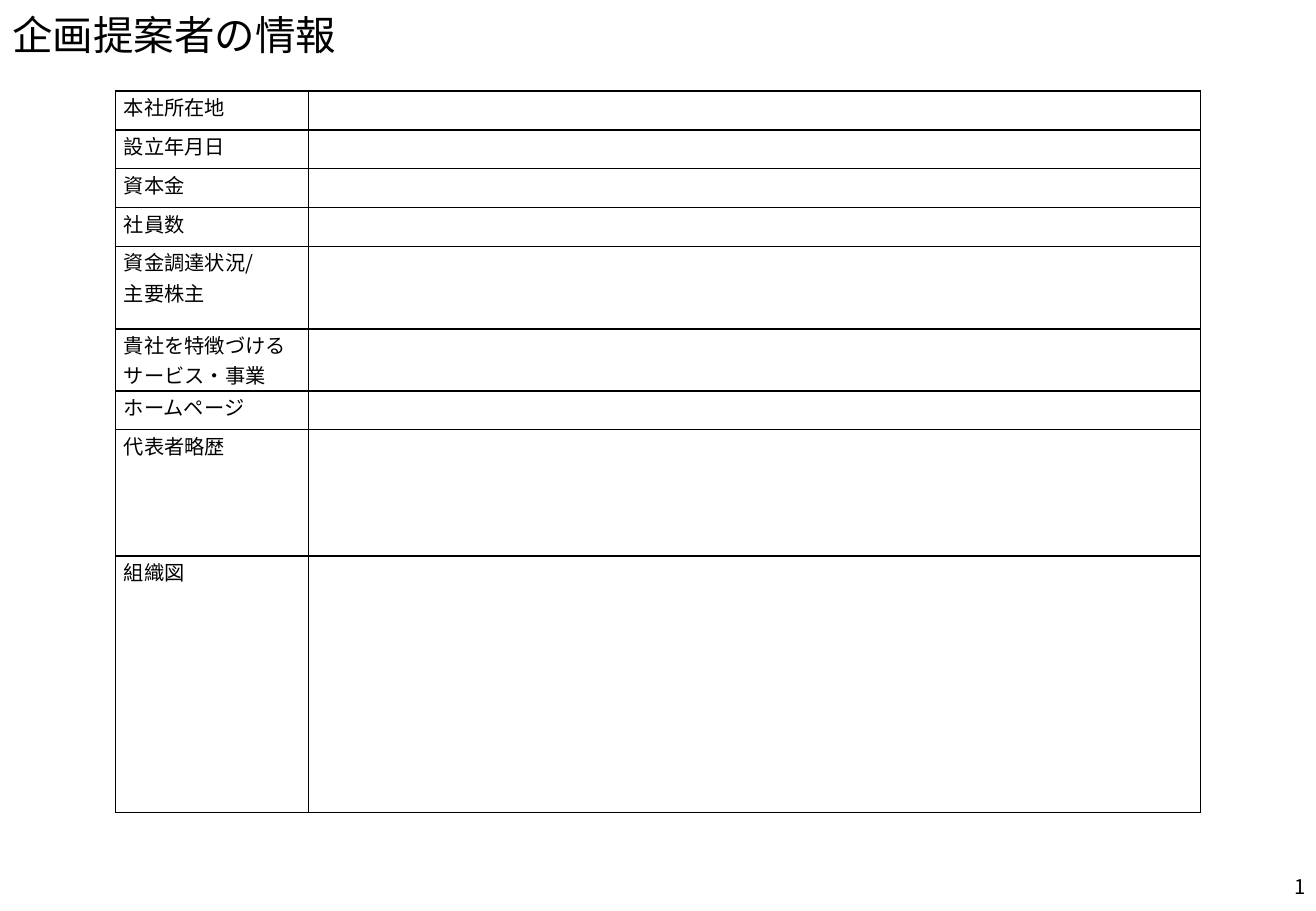
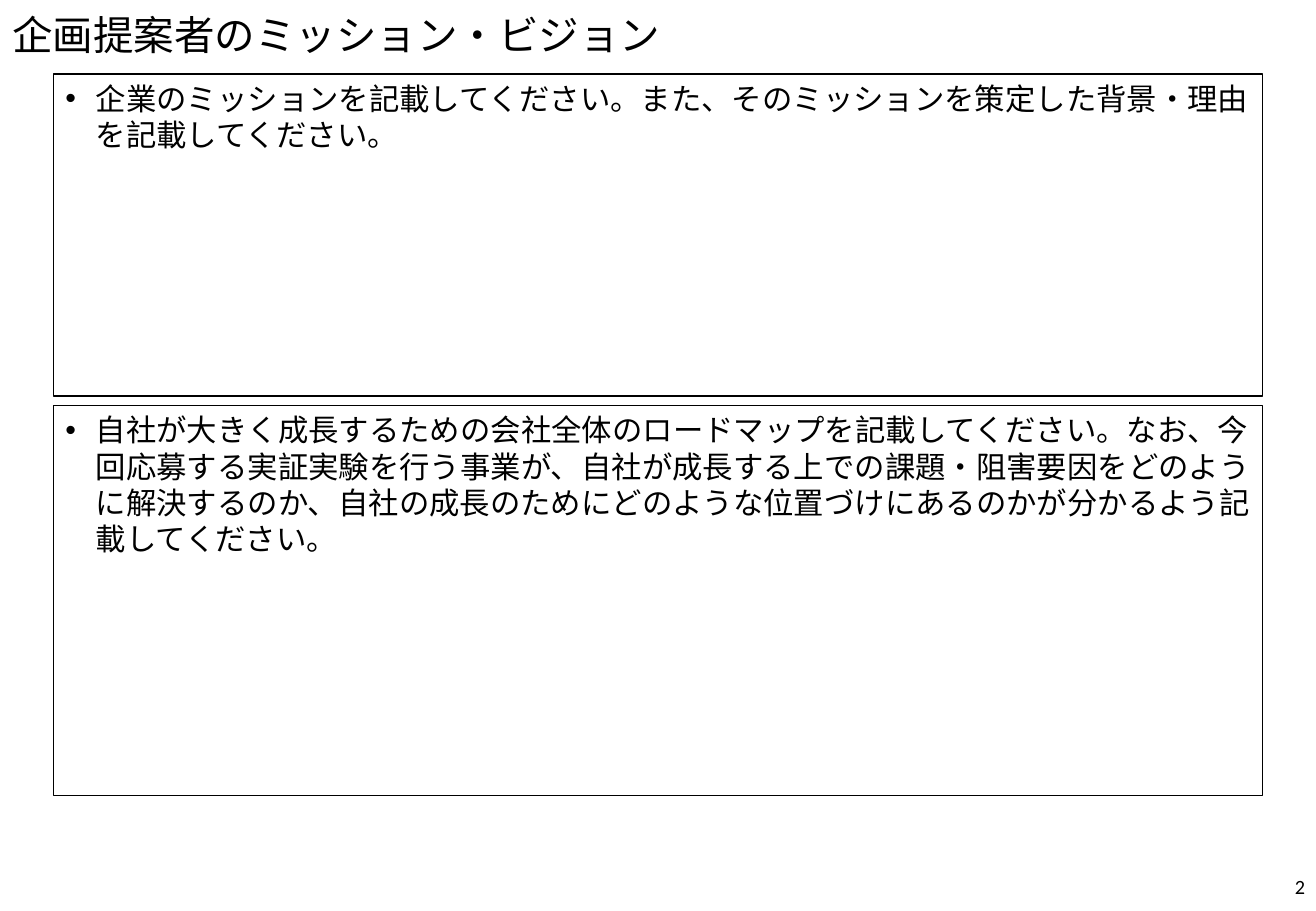
from lxml import etree
from pptx import Presentation
from pptx.dml.color import RGBColor
from pptx.enum.shapes import MSO_SHAPE
from pptx.enum.text import MSO_ANCHOR, PP_ALIGN
from pptx.oxml.ns import qn
from pptx.util import Inches, Pt

BLACK = RGBColor(0, 0, 0)
WHITE = RGBColor(255, 255, 255)
FONT = "Noto Sans CJK JP"

TITLE = {"line_spacing": 0.9, "alignment": PP_ALIGN.LEFT}
NUMBER = {"alignment": PP_ALIGN.RIGHT}
LABEL = {"line_spacing": Pt(18), "alignment": PP_ALIGN.LEFT}
BULLET = {"line_spacing": Pt(21.5), "space_before": Pt(6),
          "alignment": PP_ALIGN.LEFT}
FRAME = {"word_wrap": True, "vertical_anchor": MSO_ANCHOR.MIDDLE}
CELL = {"margin_left": Inches(0.07), "margin_right": Inches(0.07),
        "margin_top": 0, "margin_bottom": 0}

PROFILE = [
    (0.32, ["本社所在地"]),
    (0.32, ["設立年月日"]),
    (0.32, ["資本金"]),
    (0.32, ["社員数"]),
    (0.68, ["資金調達状況/", "主要株主"]),
    (0.51, ["貴社を特徴づける", "サービス・事業"]),
    (0.32, ["ホームページ"]),
    (1.04, ["代表者略歴"]),
    (2.11, ["組織図"]),
]
PANELS = [
    (0.61, 2.65, "企業のミッションを記載してください。また、そのミッションを策定した"
                 "背景・理由を記載してください。"),
    (3.34, 3.21, "自社が大きく成長するための会社全体のロードマップを記載してください。"
                 "なお、今回応募する実証実験を行う事業が、自社が成長する上での課題・"
                 "阻害要因をどのように解決するのか、自社の成長のためにどのような"
                 "位置づけにあるのかが分かるよう記載してください。"),
]


def apply(obj, values):
    for name, value in values.items():
        setattr(obj, name, value)


def box(*lengths):
    return [Inches(n) for n in lengths]


class Deck:
    def __init__(self):
        self.prs = Presentation()
        self.prs.slide_width, self.prs.slide_height = box(10.83, 7.5)
        self.s = None

    def slide(self, title, number_font=FONT):
        self.s = self.prs.slides.add_slide(self.prs.slide_layouts[5])
        sp = self.s.shapes.title
        sp.left, sp.top, sp.width, sp.height = box(0, 0, 9.34, 0.61)
        apply(sp.text_frame, FRAME)
        self.text(sp.text_frame.paragraphs[0], title, 24, TITLE)
        self.number(number_font)

    def text(self, p, text, size, style, font=FONT, hang=0):
        apply(p, style)
        if hang:
            pPr = p._p.get_or_add_pPr()
            pPr.set("marL", str(Inches(hang)))
            pPr.set("indent", str(-Inches(hang)))
        r = p.add_run()
        r.text = text
        apply(r.font, {"size": Pt(size), "name": font})
        r.font.color.rgb = BLACK
        latin = r._r.rPr.find(qn("a:latin"))
        latin.addnext(etree.Element(qn("a:ea"), typeface=font))
        return r

    def number(self, font):
        sp = self.s.shapes.add_textbox(*box(8.4, 7.1, 2.44, 0.4))
        tf = sp.text_frame
        apply(tf, FRAME)
        r = self.text(tf.paragraphs[0], str(len(self.prs.slides)), 12,
                      NUMBER, font)
        r._r.tag = qn("a:fld")
        r._r.set("id", "{B6F15528-21DE-4FAA-801E-634DDDAF4B2B}")
        r._r.set("type", "slidenum")

    def cell(self, cell, lines):
        apply(cell, CELL)
        tcPr = cell._tc.get_or_add_tcPr()
        for side in "LRTB":
            ln = etree.SubElement(tcPr, qn(f"a:ln{side}"), w=str(Pt(1)))
            fill = etree.SubElement(ln, qn("a:solidFill"))
            etree.SubElement(fill, qn("a:srgbClr"), val=str(BLACK))
        cell.fill.solid()
        cell.fill.fore_color.rgb = WHITE
        tf = cell.text_frame
        apply(tf.paragraphs[0], LABEL)
        for i, line in enumerate(lines):
            p = tf.add_paragraph() if i else tf.paragraphs[0]
            self.text(p, line, 12, LABEL, hang=0.15)

    def table(self, rows, widths, left, top):
        height = sum(h for h, _ in rows)
        frame = self.s.shapes.add_table(
            len(rows), len(widths), *box(left, top, sum(widths), height))
        table = frame.table
        apply(table, {"first_row": False, "horz_banding": False})
        for column, width in zip(table.columns, widths):
            column.width = Inches(width)
        for row, (height, lines) in zip(table.rows, rows):
            row.height = Inches(height)
            self.cell(row.cells[0], lines)
            self.cell(row.cells[1], [])

    def panel(self, top, height, text):
        sp = self.s.shapes.add_shape(
            MSO_SHAPE.RECTANGLE, *box(0.44, top, 9.95, height))
        sp.shadow.inherit = False
        sp.fill.background()
        sp.line.color.rgb = BLACK
        sp.line.width = Pt(0.75)
        tf = sp.text_frame
        apply(tf, {"word_wrap": True, "vertical_anchor": MSO_ANCHOR.TOP})
        p = tf.paragraphs[0]
        self.text(p, text, 18, BULLET, hang=0.25)
        pPr = p._p.get_or_add_pPr()
        etree.SubElement(pPr, qn("a:buFont"), typeface="Arial")
        etree.SubElement(pPr, qn("a:buChar"), char="•")


def main():
    deck = Deck()
    deck.slide("企画提案者の情報")
    deck.table(PROFILE, [1.59, 7.34], 0.95, 0.75)
    deck.slide("企画提案者のミッション・ビジョン", "Calibri")
    for panel in PANELS:
        deck.panel(*panel)
    deck.prs.save("out.pptx")


if __name__ == "__main__":
    main()
